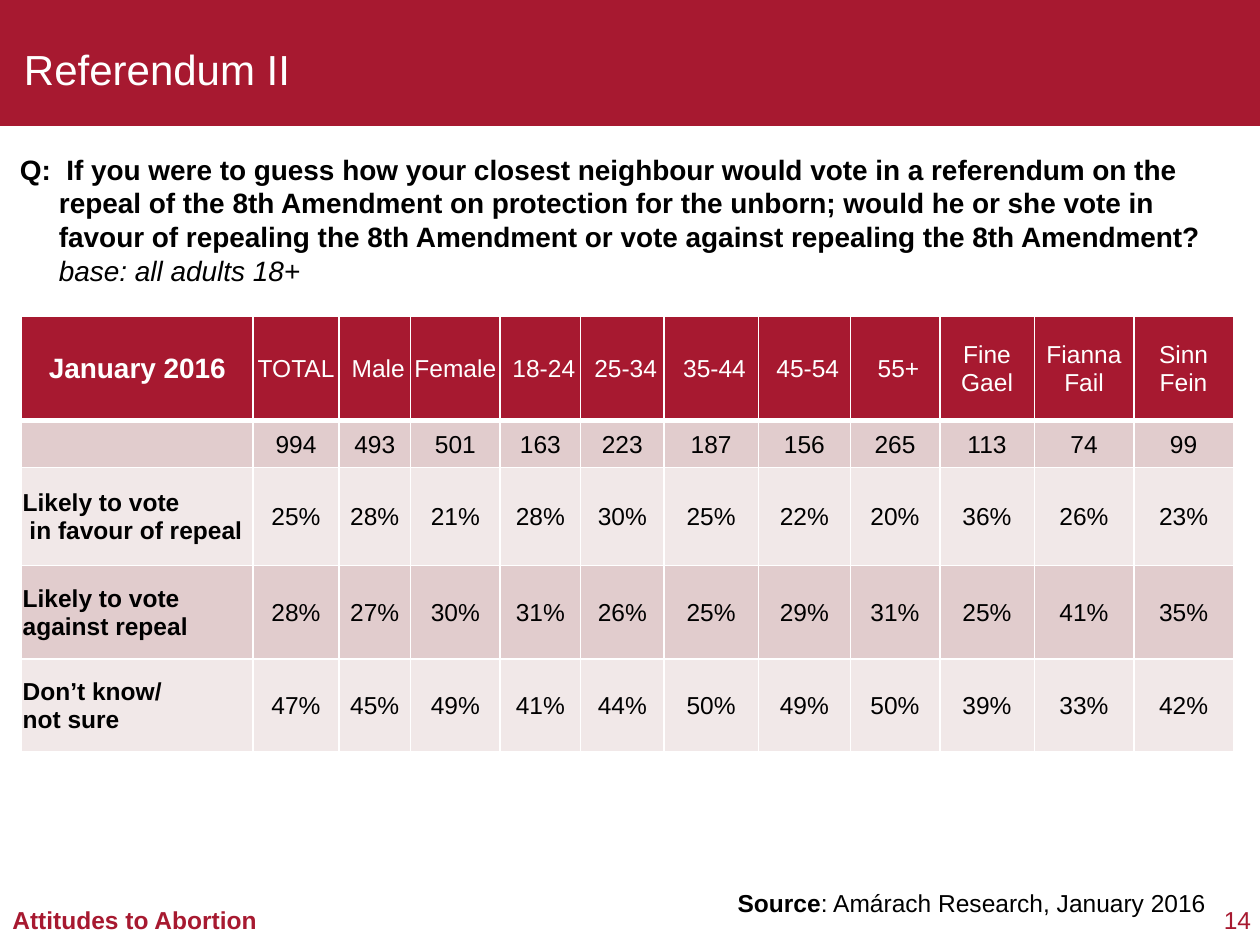
from pptx import Presentation
from pptx.dml.color import RGBColor
from pptx.enum.shapes import MSO_SHAPE
from pptx.enum.text import MSO_ANCHOR, PP_ALIGN
from pptx.oxml.ns import qn
from pptx.util import Inches, Pt
from lxml import etree

RED = RGBColor(0xA7, 0x19, 0x30)
ROSE = RGBColor(0xE1, 0xCC, 0xCD)
PALE = RGBColor(0xF1, 0xE8, 0xE8)
WHITE = RGBColor(0xFF, 0xFF, 0xFF)
BLACK = RGBColor(0, 0, 0)

LEFT, CENTER, RIGHT = PP_ALIGN.LEFT, PP_ALIGN.CENTER, PP_ALIGN.RIGHT
MIDDLE, TOP = MSO_ANCHOR.MIDDLE, MSO_ANCHOR.TOP
RECT = MSO_SHAPE.RECTANGLE

WIDTHS = [1.84, 0.68, 0.57, 0.71, 0.64, 0.66, 0.75, 0.73, 0.71, 0.75, 0.79, 0.79]
HEIGHTS = [0.83, 0.37, 0.78, 0.74, 0.74]
ROWS = [
    ["January 2016", "TOTAL", " Male", "Female", " 18-24", " 25-34", " 35-44",
     " 45-54", " 55+", "Fine Gael", "Fianna Fail", "Sinn Fein"],
    ["", 994, 493, 501, 163, 223, 187, 156, 265, 113, 74, 99],
    ["Likely to vote\n in favour of repeal", 25, 28, 21, 28, 30, 25, 22, 20, 36, 26, 23],
    ["Likely to vote\nagainst repeal", 28, 27, 30, 31, 26, 25, 29, 31, 25, 41, 35],
    ["Don’t know/\nnot sure", 47, 45, 49, 41, 44, 50, 49, 50, 39, 33, 42],
]
QUERY = ("Q:  If you were to guess how your closest neighbour would vote in a "
         "referendum on the repeal of the 8th Amendment on protection for the "
         "unborn; would he or she vote in favour of repealing the 8th Amendment "
         "or vote against repealing the 8th Amendment?")


def add_run(para, text, color, size=14, **extra):
    run = para.add_run()
    run.text = text
    style = {"name": "Arial", "size": Pt(size), "bold": False, "italic": False}
    for key, value in {**style, **extra}.items():
        setattr(run.font, key, value)
    run.font.color.rgb = color


def add_box(slide, x, y, w, h, wrap=True):
    box = slide.shapes.add_textbox(Inches(x), Inches(y), Inches(w), Inches(h))
    box.text_frame.word_wrap = wrap
    return box.text_frame


def set_inset(frame, **sides):
    for side, value in sides.items():
        setattr(frame, "margin_" + side, Inches(value))


def add_title(slide):
    # Banner goes to the back, behind the title
    bar = slide.shapes.add_shape(RECT, 0, 0, Inches(10), Inches(1))
    bar.shadow.inherit = False
    bar.fill.solid()
    bar.fill.fore_color.rgb = RED
    bar.line.fill.background()
    slide.shapes._spTree.insert(2, bar._element)

    title = slide.shapes.title
    place = {"left": 0, "top": 0.26, "width": 7.75, "height": 0.57}
    for key, value in place.items():
        setattr(title, key, Inches(value))
    frame = title.text_frame
    frame.vertical_anchor = MIDDLE
    set_inset(frame, left=0.19)
    para = frame.paragraphs[0]
    para.alignment = LEFT
    add_run(para, "Referendum II", WHITE, 24)


def add_query(slide):
    frame = add_box(slide, 0.06, 1.16, 9.94, 1.18)
    set_inset(frame, right=0.3)
    first, base = frame.paragraphs[0], frame.add_paragraph()
    for para, indent in ((first, -0.31), (base, 0)):
        props = para._p.get_or_add_pPr()
        props.set("marL", str(Inches(0.31)))
        props.set("indent", str(Inches(indent)))
    add_run(first, QUERY, BLACK, 16, bold=True)
    add_run(base, "base: all adults 18+", BLACK, 16, italic=True)


def set_edges(cell, top, bottom):
    props = cell._tc.get_or_add_tcPr()
    for tag, width in (("lnL", 1), ("lnR", 1), ("lnT", top), ("lnB", bottom)):
        line = etree.SubElement(props, qn("a:" + tag), w=str(Pt(width)))
        fill = etree.SubElement(line, qn("a:solidFill"))
        etree.SubElement(fill, qn("a:srgbClr"), val=str(WHITE))


def fill_cell(cell, value, row, col):
    head, label = row == 0, col == 0
    set_edges(cell, 3 if row == 1 else 1, 3 if head else 1)
    cell.fill.solid()
    cell.fill.fore_color.rgb = RED if head else ROSE if row % 2 else PALE
    cell.vertical_anchor = MIDDLE
    set_inset(cell, left=0.01, top=0.01, right=0.01, bottom=0)

    text = f"{value}%" if row > 1 and not label else str(value)
    frame = cell.text_frame
    for i, part in enumerate(text.split("\n") if text else []):
        para = frame.add_paragraph() if i else frame.paragraphs[0]
        para.alignment = LEFT if label and not head else CENTER
        add_run(para, part, WHITE if head else BLACK,
                16 if head and label else 14, bold=label)


def add_grid(slide):
    table = slide.shapes.add_table(
        len(ROWS), len(WIDTHS), Inches(0.17), Inches(2.51),
        Inches(sum(WIDTHS)), Inches(sum(HEIGHTS))).table
    for col, width in zip(table.columns, WIDTHS):
        col.width = Inches(width)
    for row, height in zip(table.rows, HEIGHTS):
        row.height = Inches(height)
    for r, values in enumerate(ROWS):
        for c, value in enumerate(values):
            fill_cell(table.cell(r, c), value, r, c)


def add_foot(slide):
    topic = add_box(slide, 0, 7.13, 2.16, 0.34, wrap=False)
    add_run(topic.paragraphs[0], "Attitudes to Abortion", RED, bold=True)

    source = add_box(slide, 4.97, 7, 4.7, 0.34).paragraphs[0]
    source.alignment = RIGHT
    add_run(source, "Source", BLACK, bold=True)
    add_run(source, ": Amárach Research, January 2016", BLACK)

    page = add_box(slide, 9.69, 7.18, 0.24, 0.23, wrap=False)
    page.vertical_anchor = TOP
    set_inset(page, left=0, top=0, right=0, bottom=0)
    page.paragraphs[0].alignment = RIGHT
    add_run(page.paragraphs[0], "14", RED)


def main():
    deck = Presentation()
    deck.slide_width, deck.slide_height = Inches(10), Inches(7.5)
    slide = deck.slides.add_slide(deck.slide_layouts[5])
    add_title(slide)
    add_query(slide)
    add_grid(slide)
    add_foot(slide)
    deck.save("out.pptx")


if __name__ == "__main__":
    main()
